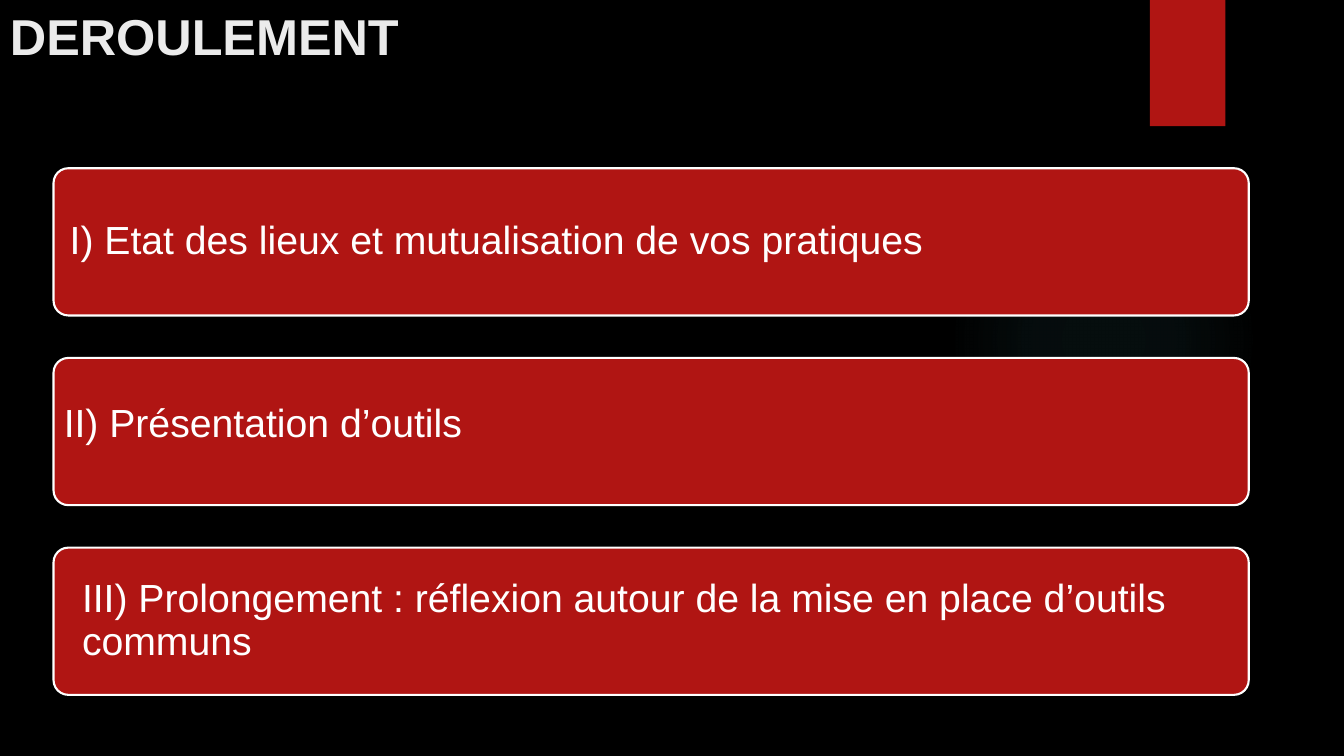
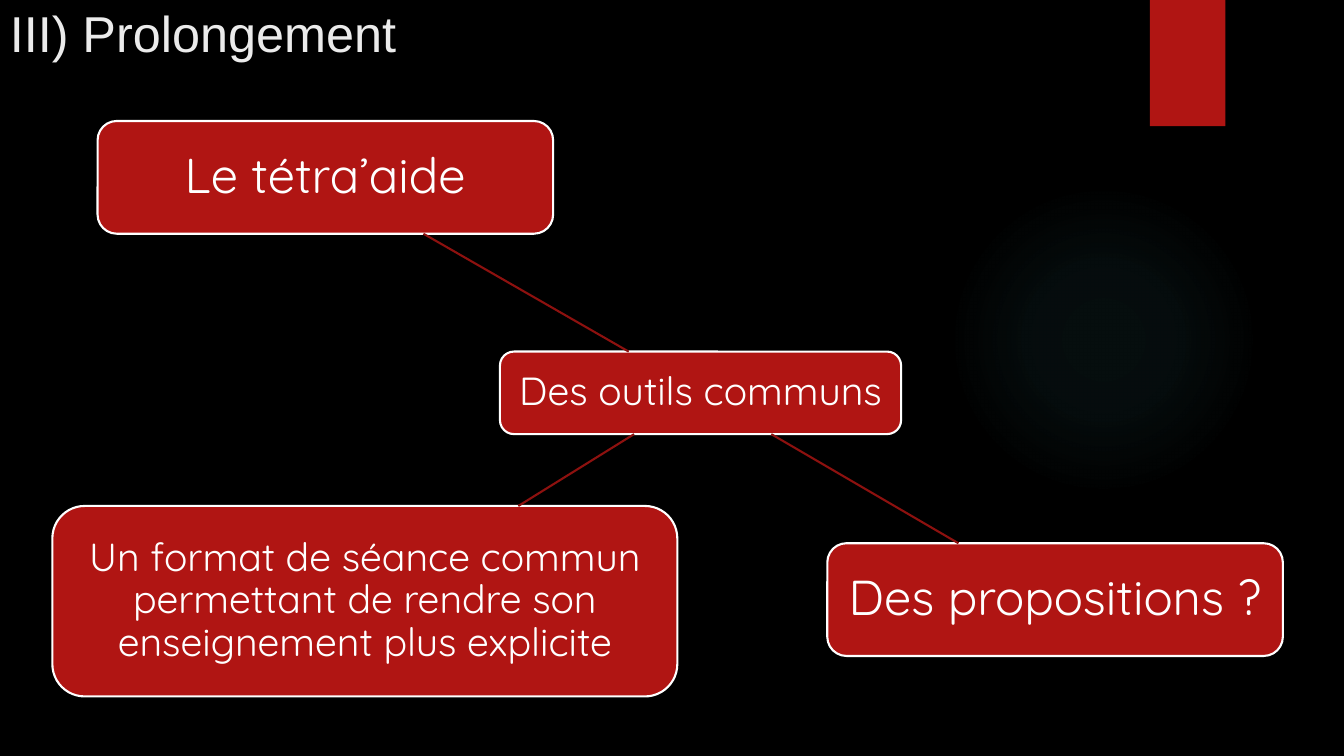
from collections import namedtuple

from pptx import Presentation
from pptx.dml.color import RGBColor
from pptx.enum.shapes import MSO_CONNECTOR, MSO_SHAPE
from pptx.enum.text import MSO_ANCHOR, PP_ALIGN
from pptx.oxml import parse_xml
from pptx.oxml.ns import nsdecls, qn
from pptx.util import Cm, Pt

BLACK = RGBColor(0x00, 0x00, 0x00)
RED = RGBColor(0xB0, 0x15, 0x13)
DARK_RED = RGBColor(0x8D, 0x11, 0x0F)
WHITE = RGBColor(0xFF, 0xFF, 0xFF)
PALE = RGBColor(0xEB, 0xEB, 0xEB)
GLOW = RGBColor(0x50, 0xB9, 0xC1)
GLOW_STOPS = ((0, 7), (36, 6), (69, 0))

OVAL, RECTANGLE, ROUNDED = MSO_SHAPE.OVAL, MSO_SHAPE.RECTANGLE, MSO_SHAPE.ROUNDED_RECTANGLE
STRAIGHT = MSO_CONNECTOR.STRAIGHT
MIDDLE = MSO_ANCHOR.MIDDLE
LEFT, CENTER = PP_ALIGN.LEFT, PP_ALIGN.CENTER

BODY_FONT, NODE_FONT = "Arial", "Quicksand"
LINE_WIDTH = Pt(1.5)

Box = namedtuple("Box", "left top width height")

GLOW_BOX = Box(Cm(23.9), Cm(4.65), Cm(7.82), Cm(7.82))
TAB_BOX = Box(Cm(28.98), Cm(0), Cm(1.9), Cm(3.18))
AGENDA_BOX = Box(Cm(1.35), Cm(4.24), Cm(30.12), Cm(13.27))
AGENDA_BAR_HEIGHT = Cm(3.71)
AGENDA = (
    ("I) Etat des lieux et mutualisation de vos pratiques", Cm(0.3), Cm(0)),
    ("II) Présentation d’outils", Cm(0.15), Cm(0.36)),
    ("III) Prolongement : réflexion autour de la mise en place d’outils communs", Cm(0.61), Cm(0)),
)
HUB = ("Des outils communs", 28, Box(Cm(12.6), Cm(8.86), Cm(10.11), Cm(2.08)))
BRANCHES = (
    ("Le tétra’aide", 35, Box(Cm(2.46), Cm(3.05), Cm(11.48), Cm(2.84))),
    ("Des propositions ?", 35, Box(Cm(20.85), Cm(13.69), Cm(11.48), Cm(2.84))),
    ("Un format de séance commun permettant de rendre son enseignement plus explicite", 28,
     Box(Cm(1.32), Cm(12.75), Cm(15.75), Cm(4.8))),
)


def set_values(target, values):
    for name, value in values.items():
        setattr(target, name, value)


def write_text(shape, text, font, frame=None, para=None):
    text_frame = shape.text_frame
    set_values(text_frame, {"word_wrap": True, **(frame or {})})
    first = text_frame.paragraphs[0]
    set_values(first, para or {})
    span = first.add_run()
    span.text = text
    color = font.pop("color")
    set_values(span.font, font)
    span.font.color.rgb = color


def add_plain_shape(page, kind, box):
    shape = page.shapes.add_shape(kind, *box)
    shape.shadow.inherit = False
    shape.fill.solid()
    shape.fill.fore_color.rgb = RED
    shape.line.fill.background()
    return shape


def add_glow(page, box):
    shape = add_plain_shape(page, OVAL, box)
    stops = "".join(
        f'<a:gs pos="{place * 1000}"><a:srgbClr val="{GLOW}">'
        f'<a:alpha val="{alpha * 1000}"/></a:srgbClr></a:gs>'
        for place, alpha in GLOW_STOPS
    )
    gradient = parse_xml(
        f'<a:gradFill {nsdecls("a")} rotWithShape="1"><a:gsLst>{stops}</a:gsLst>'
        '<a:path path="circle"><a:fillToRect l="50000" t="50000" r="50000" b="50000"/>'
        '</a:path></a:gradFill>'
    )
    properties = shape.element.spPr
    properties.replace(properties.find(qn("a:solidFill")), gradient)


def add_page(deck, title, top, bold):
    page = deck.slides.add_slide(deck.slide_layouts[6])
    page.background.fill.solid()
    page.background.fill.fore_color.rgb = BLACK
    add_glow(page, GLOW_BOX)
    add_plain_shape(page, RECTANGLE, TAB_BOX)
    title_box = page.shapes.add_textbox(Cm(0), top, Cm(28.73), Cm(1.8))
    write_text(title_box, title,
               {"name": BODY_FONT, "size": Pt(36), "bold": bold, "color": PALE})
    return page


def add_card(page, box, text, font_name, size, align, frame, corner=0.17):
    card = add_plain_shape(page, ROUNDED, box)
    card.adjustments[0] = corner
    card.line.color.rgb = WHITE
    card.line.width = LINE_WIDTH
    write_text(card, text,
               {"name": font_name, "size": Pt(size), "color": WHITE},
               {"vertical_anchor": MIDDLE, **frame},
               {"alignment": align, "line_spacing": 0.9})


def add_agenda(page, box):
    pitch = (box.height - AGENDA_BAR_HEIGHT) // (len(AGENDA) - 1)
    for index, (text, indent, lift) in enumerate(AGENDA):
        bar = Box(box.left, box.top + index * pitch, box.width, AGENDA_BAR_HEIGHT)
        frame = {"margin_left": indent, "margin_right": Cm(0.3),
                 "margin_top": Cm(0), "margin_bottom": lift}
        add_card(page, bar, text, BODY_FONT, 28, LEFT, frame, 0.1)


def middle(box):
    return box.left + box.width / 2, box.top + box.height / 2


def edge_point(box, other):
    x, y = middle(box)
    other_x, other_y = middle(other)
    edge = box.top + box.height if other_y > y else box.top
    return round(x + (edge - y) * (other_x - x) / (other_y - y)), edge


def add_link(page, start, end):
    link = page.shapes.add_connector(STRAIGHT, *edge_point(start, end), *edge_point(end, start))
    link.line.color.rgb = DARK_RED
    link.line.width = LINE_WIDTH
    link.element.spPr.append(parse_xml(f'<a:effectLst {nsdecls("a")}/>'))


def add_mind_map(page, hub, branches):
    frame = {"margin_" + side: Cm(0.2) for side in ("left", "top", "right", "bottom")}
    for text, size, box in (hub, *branches):
        add_card(page, box, text, NODE_FONT, size, CENTER, frame)
    for branch in branches:
        add_link(page, hub[2], branch[2])


def main():
    deck = Presentation()
    set_values(deck, {"slide_width": Cm(33.87), "slide_height": Cm(19.05)})
    add_agenda(add_page(deck, "DEROULEMENT", Cm(0), True), AGENDA_BOX)
    add_mind_map(add_page(deck, "III) Prolongement", Cm(-0.08), False), HUB, BRANCHES)
    deck.save("out.pptx")


if __name__ == "__main__":
    main()
